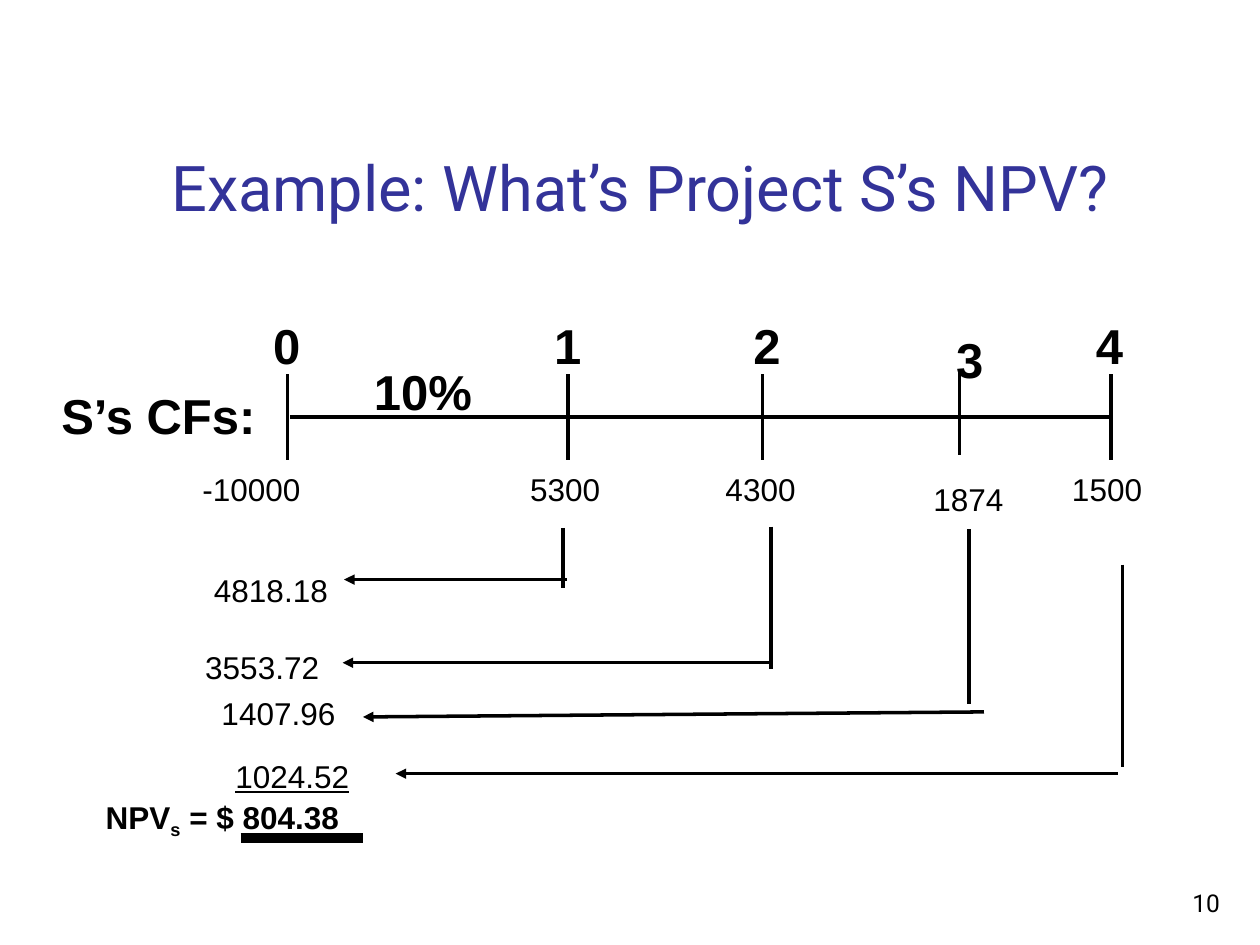
from collections import namedtuple
from dataclasses import dataclass

from lxml.etree import SubElement
from pptx import Presentation
from pptx.dml.color import RGBColor
from pptx.enum.shapes import MSO_CONNECTOR
from pptx.enum.text import MSO_ANCHOR as Anchor, MSO_AUTO_SIZE as AutoSize, PP_ALIGN as Align
from pptx.oxml.ns import qn
from pptx.util import Pt

Box = namedtuple("Box", "left top width height")


@dataclass(frozen=True)
class Theme:
    ink: RGBColor = RGBColor(0, 0, 0)
    title_ink: RGBColor = RGBColor(0x33, 0x33, 0x99)
    heading_font: str = "Roboto"
    body_font: str = "Arial"
    title_size: int = 36
    period_size: int = 28
    value_size: int = 18
    number_size: int = 14
    line: int = 2
    total_line: int = 6


THEME = Theme()


def style(para, size, color=THEME.ink, font=THEME.body_font, bold=False, underline=None):
    for span in para.runs:
        span.font.name = font
        span.font.size = Pt(size)
        span.font.color.rgb = color
        span.font.bold = bold
        span.font.underline = underline


def add_label(page, box, text, size, wrap=False, **looks):
    label = page.shapes.add_textbox(*map(Pt, box))
    frame = label.text_frame
    frame.word_wrap = wrap
    frame.auto_size = AutoSize.SHAPE_TO_FIT_TEXT
    frame.text = text
    style(frame.paragraphs[0], size, **looks)
    return label


def add_line(page, x1, y1, x2, y2, width=THEME.line, arrow=False):
    line = page.shapes.add_connector(MSO_CONNECTOR.STRAIGHT, Pt(x1), Pt(y1), Pt(x2), Pt(y2))
    line.line.color.rgb = THEME.ink
    line.line.width = Pt(width)
    if arrow:
        SubElement(line.line._get_or_add_ln(), qn("a:tailEnd"), type="triangle")
    SubElement(line._element.spPr, qn("a:effectLst"))


def add_title(page, box, text):
    title = page.shapes.title
    title.left, title.top, title.width, title.height = map(Pt, box)
    frame = title.text_frame
    frame.text = text
    frame.vertical_anchor = Anchor.BOTTOM
    frame.paragraphs[0].alignment = Align.LEFT
    style(frame.paragraphs[0], THEME.title_size, THEME.title_ink, THEME.heading_font)


def add_page_number(page, box, number):
    label = add_label(page, box, number, THEME.number_size, wrap=True, font=THEME.heading_font)
    label.text_frame.auto_size = AutoSize.NONE
    label.text_frame.vertical_anchor = Anchor.BOTTOM
    label.text_frame.paragraphs[0].alignment = Align.RIGHT


def add_timeline(page, box):
    left, top = box.left, box.top
    # Period, its left; cash flow, its left and width; tick; drops of period, tick and flow
    periods = [
        ("0", 121, "-10000", 80.6, 71.3, 136.2, 0, 0, 0),
        ("1", 281.6, "5300", 267.9, 54.7, 296.7, 0, 0, 0),
        ("2", 395.4, "4300", 379.5, 62.6, 407.6, 0, 0, 0),
        ("3", 511.3, "1874", 498.3, 54.7, 520.2, 8, -3, 5.7),
        ("4", 591.2, "1500", 577.5, 54.7, 607, 0, 0, 0),
    ]
    for period, period_x, flow, flow_x, flow_width, tick_x, drop, tick_drop, flow_drop in periods:
        add_label(page, Box(left + period_x, top + drop, 30, 41), period,
                  THEME.period_size, bold=True)
        add_label(page, Box(left + flow_x, top + 88 + flow_drop, flow_width, 29), flow,
                  THEME.value_size)
        tick_top = top + 36.8 + tick_drop
        add_line(page, left + tick_x, tick_top, left + tick_x, tick_top + 49)

    # Axis with its row name and rate
    add_line(page, left + 137.6, top + 61.3, left + box.width, top + 61.3)
    add_label(page, Box(left, top + 40, 126.7, 41), "S’s CFs:", THEME.period_size, bold=True)
    add_label(page, Box(left + 178.6, top + 26, 70.6, 41), "10%", THEME.period_size, bold=True)


def add_discounting(page, box):
    left, top = box.left, box.top
    # Present value with its box, stem (x, top, bottom), arrow (from, to)
    flows = [
        ("4818.18", (9.2, 22.6, 80), (215.8, 1.7, 36.2), (218, 31.2, 90.6, 31.2)),
        ("3553.72", (4.2, 66.5, 86), (334.6, 1, 82.3), (334, 78.7, 89.8, 78.7)),
        ("1407.96", (13.5, 93.1, 83), (447.7, 2.4, 102.5), (456.3, 106.8, 101.4, 109.7)),
        ("1024.52", (21.4, 129.1, 96.5), (535.5, 22.6, 138.5), (532.6, 142.1, 120.1, 142.1)),
    ]
    for value, (x, y, width), (stem_x, stem_top, stem_end), (x1, y1, x2, y2) in flows:
        is_last = value == flows[-1][0]
        add_label(page, Box(left + x, top + y, width, 29), value, THEME.value_size,
                  wrap=True, underline=is_last or None)
        add_line(page, left + stem_x, top + stem_top, left + stem_x, top + stem_end)
        add_line(page, left + x1, top + y1, left + x2, top + y2, arrow=True)


def add_total(page, box):
    label = add_label(page, box, "NPV", THEME.value_size, wrap=True, bold=True)
    para = label.text_frame.paragraphs[0]
    subscript = para.add_run()
    subscript.text = "s"
    subscript.font._element.set("baseline", "-25000")
    para.add_run().text = " = $ 804.38"
    style(para, THEME.value_size, bold=True)
    # Heavy rule under the amount
    rule_y = box.top + 26.6
    add_line(page, box.left + 84.2, rule_y, box.left + 154, rule_y, THEME.total_line)


def main():
    deck = Presentation()
    deck.slide_width, deck.slide_height = Pt(720), Pt(540)
    page = deck.slides.add_slide(deck.slide_layouts[5])
    add_title(page, Box(90.7, 16.6, 613.4, 115.2), "Example: What’s Project S’s NPV?")
    add_timeline(page, Box(28, 177, 606, 122))
    add_discounting(page, Box(106, 300, 536, 158))
    add_total(page, Box(53.3, 452.2, 163.4, 29))
    add_page_number(page, Box(554.4, 491.8, 149.8, 36), "10")
    deck.save("out.pptx")


if __name__ == "__main__":
    main()
